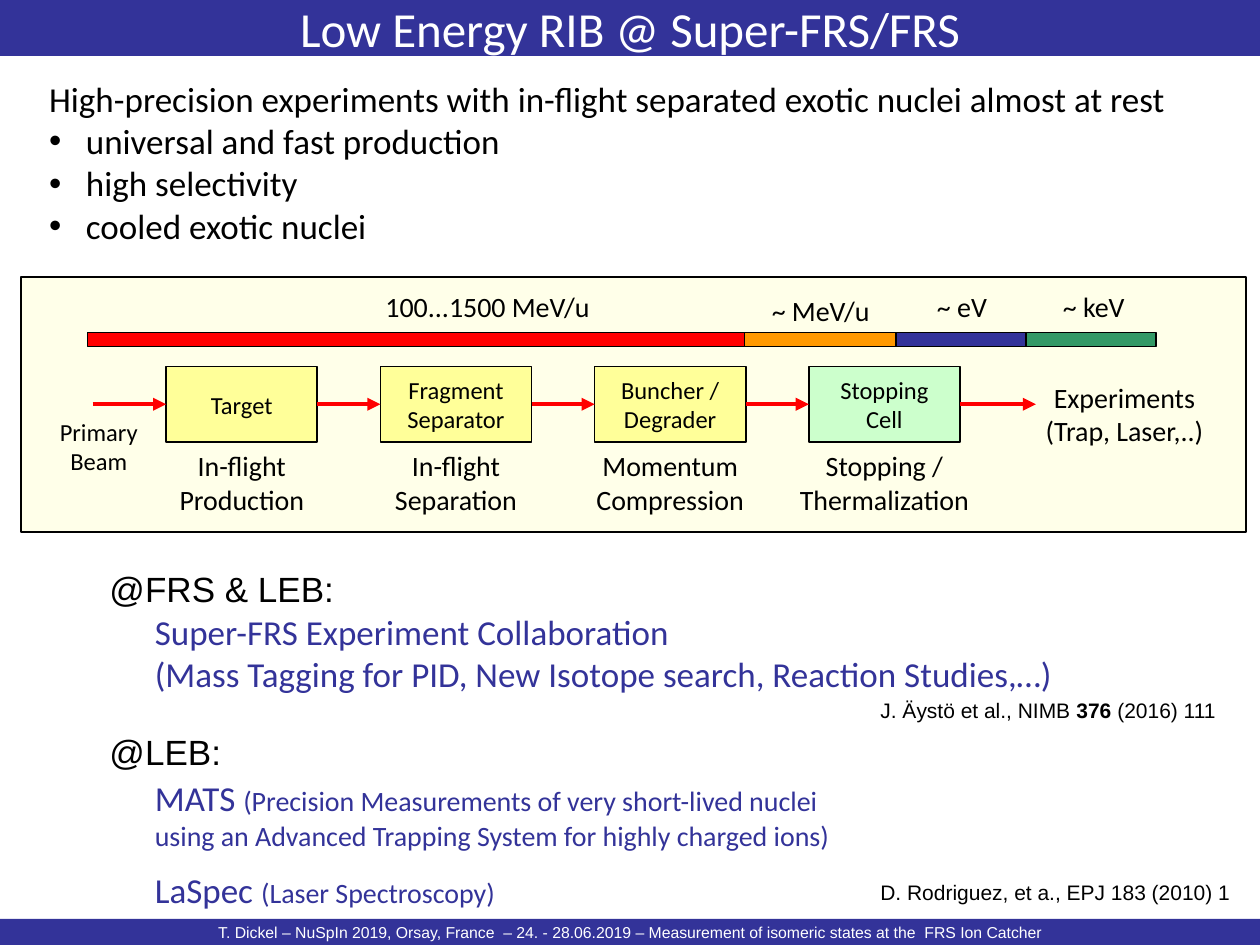
"""Build the slide on low-energy beams at the Super-FRS."""
from dataclasses import dataclass

from lxml import etree
from pptx import Presentation
from pptx import util as u
from pptx.dml.color import RGBColor
from pptx.enum import shapes, text
from pptx.oxml.ns import qn

Pt = u.Pt
BLACK = RGBColor(0, 0, 0)
WHITE = RGBColor(255, 255, 255)
BLUE = RGBColor(0x33, 0x33, 0x99)
CREAM = RGBColor(0xFF, 0xFF, 0xE9)
YELLOW = RGBColor(0xFF, 0xFF, 0x99)
MINT = RGBColor(0xCC, 0xFF, 0xCC)
RED = RGBColor(0xFF, 0, 0)
ORANGE = RGBColor(0xFF, 0x99, 0)
GREEN = RGBColor(0x33, 0x99, 0x66)
BODY, PLAIN = "Calibri", "Arial"
LEFT, CENTER = text.PP_ALIGN.LEFT, text.PP_ALIGN.CENTER
STEP, WIDE, HIGH = 122.4, 86.4, 43.2
FIRST, ROW, MID = 95, 209.4, 231


@dataclass
class Stage:
    name: str
    task: str
    fill: RGBColor = YELLOW


@dataclass
class Band:
    label: str
    width: float
    fill: RGBColor
    mid: float
    top: float = 162


@dataclass
class Note:
    words: str
    left: float
    top: float
    width: float
    size: float


STAGES = [
    Stage("Target", "In-flight\nProduction"),
    Stage("Fragment\nSeparator", "In-flight\nSeparation"),
    Stage("Buncher /\nDegrader", "Momentum\nCompression"),
    Stage("Stopping\nCell", "Stopping /\nThermalization", MINT),
]
BANDS = [
    Band("100...1500 MeV/u", 375.5, RED, 278.6),
    Band("~ MeV/u", 86.4, ORANGE, 469, 164),
    Band("~ eV", 74.5, BLUE, 549.7),
    Band("~ keV", 74.3, GREEN, 625),
]
NOTES = [
    Note("@FRS & LEB:", 55.5, 321, 144, 20),
    Note("@LEB:", 55.5, 414, 80, 20),
    Note("J. Äystö et al., NIMB |376 |(2016) 111", 496, 395.3, 214, 12),
    Note("D. Rodriguez, et a., EPJ 183 (2010) 1", 496, 499, 216, 12),
]


def style(para, size: float, face: str = BODY, color: RGBColor = BLACK,
          align=LEFT) -> None:
    """Format a paragraph and its runs."""
    para.alignment = align
    for run in para.runs:
        run.font.size, run.font.name = Pt(size), face
        run.font.color.rgb = color


def block(slide, left: float, top: float, width: float, high: float,
          fill: RGBColor, edge: bool = True):
    """Draw a filled rectangle."""
    box = slide.shapes.add_shape(shapes.MSO_SHAPE.RECTANGLE, Pt(left), Pt(top),
                                 Pt(width), Pt(high))
    box.shadow.inherit = False
    box.fill.solid()
    box.fill.fore_color.rgb = fill
    if edge:
        box.line.color.rgb, box.line.width = BLACK, Pt(1)
    else:
        box.line.fill.background()
    return box


def write(slide, words: str, left: float, top: float, width: float,
          high: float, size: float, face: str = BODY,
          color: RGBColor = BLACK, align=LEFT, wrap: bool = True):
    """Add a text box and return its frame."""
    frame = slide.shapes.add_textbox(Pt(left), Pt(top), Pt(width),
                                     Pt(high)).text_frame
    frame.word_wrap = wrap
    frame.text = words
    for para in frame.paragraphs:
        style(para, size, face, color, align)
    return frame


def label(slide, words: str, mid: float, top: float, size: float = 16) -> None:
    """Centre a label on a given x."""
    high = 7.2 + size * 1.22 * (words.count("\n") + 1)
    width = 150 if "\n" not in words else STEP
    write(slide, words, mid - width / 2, top, width, high, size, align=CENTER)


def arrow(slide, start: float, end: float, tail=None, head=None) -> None:
    """Draw a red arrow, joined to the boxes it touches."""
    line = slide.shapes.add_connector(shapes.MSO_CONNECTOR.STRAIGHT, Pt(start),
                                      Pt(MID), Pt(end), Pt(MID))
    if tail is not None:
        line.begin_connect(tail, 3)
    if head is not None:
        line.end_connect(head, 1)
    line.line.color.rgb, line.line.width = RED, Pt(2.5)
    etree.SubElement(line.line._get_or_add_ln(), qn("a:tailEnd"),
                     type="triangle")
    etree.SubElement(line._element.spPr, qn("a:effectLst"))


def bullet(para) -> None:
    """Give a paragraph a hanging bullet."""
    props = para._p.get_or_add_pPr()
    props.set("marL", str(Pt(21)))
    props.set("indent", str(-Pt(21)))
    etree.SubElement(props, qn("a:buFont"), typeface=PLAIN)
    etree.SubElement(props, qn("a:buChar"), char="•")


def head(slide) -> None:
    """Fill the title band."""
    title = slide.shapes.title
    title.left, title.top, title.width, title.height = 0, 0, Pt(720), Pt(32)
    title.fill.solid()
    title.fill.fore_color.rgb = BLUE
    frame = title.text_frame
    frame.text = "Low Energy RIB @ Super-FRS/FRS"
    frame.auto_size = text.MSO_AUTO_SIZE.NONE
    frame.vertical_anchor = text.MSO_ANCHOR.MIDDLE
    style(frame.paragraphs[0], 28, color=WHITE, align=CENTER)


def foot(slide) -> None:
    """Draw the footer band."""
    frame = block(slide, 0, 525, 720, 15, BLUE, False).text_frame
    frame.margin_top = frame.margin_bottom = 0
    frame.text = ("T. Dickel – NuSpIn 2019, Orsay, France  – 24. - 28.06.2019 "
                  "– Measurement of isomeric states at the  FRS Ion Catcher")
    style(frame.paragraphs[0], 9, PLAIN, WHITE, CENTER)


def scheme(slide) -> None:
    """Draw the energy scale and the chain of stages."""
    block(slide, 12, 158.4, 700, 145.5, CREAM)
    left = 50
    for band in BANDS:
        block(slide, left, 190, band.width, 8, band.fill)
        label(slide, band.label, band.mid, band.top)
        left += band.width
    last, end = None, 53
    for i, stage in enumerate(STAGES):
        left = FIRST + i * STEP
        box = block(slide, left, ROW, WIDE, HIGH, stage.fill)
        box.text_frame.text = stage.name
        box.text_frame.vertical_anchor = text.MSO_ANCHOR.MIDDLE
        for para in box.text_frame.paragraphs:
            style(para, 14, align=CENTER)
        label(slide, stage.task, left + WIDE / 2, 253)
        arrow(slide, end, left, last, box)
        last, end = box, left + WIDE
    arrow(slide, end, 592, last)
    label(slide, "Primary\nBeam", 56.5, 234.7, 14)
    label(slide, "Experiments\n(Trap, Laser,..)", 642.6, 213.8)


def main() -> None:
    """Assemble and save the slide."""
    deck = Presentation()
    deck.slide_width, deck.slide_height = Pt(720), Pt(540)
    slide = deck.slides.add_slide(deck.slide_layouts[5])
    head(slide)
    foot(slide)
    goals = write(slide, "High-precision experiments with in-flight separated "
                  "exotic nuclei almost at rest\nuniversal and fast production"
                  "\nhigh selectivity\ncooled exotic nuclei",
                  21, 41, 680, 104.4, 20)
    for para in goals.paragraphs[1:]:
        bullet(para)
    scheme(slide)
    plans = write(slide, "Super-FRS Experiment Collaboration\n(Mass Tagging for "
                  "PID, New Isotope search, Reaction Studies,…)\nMATS \nusing an "
                  "Advanced Trapping System for highly charged ions)\nLaSpec ",
                  81.4, 345.6, 532, 180, 20, color=BLUE, wrap=False).paragraphs
    plans[2].add_run().text = "(Precision Measurements of very short-lived nuclei"
    plans[4].add_run().text = "(Laser Spectroscopy)"
    for para, gap in ((plans[2], 46.4), (plans[4], 9.8)):
        para.space_before = Pt(gap)
        style(para, 16, color=BLUE)
        para.runs[0].font.size = Pt(20)
    style(plans[3], 16, color=BLUE)
    for note in NOTES:
        first, *rest = note.words.split("|")
        para = write(slide, first, note.left, note.top, note.width,
                     7.2 + note.size * 1.2, note.size, PLAIN,
                     wrap=False).paragraphs[0]
        for i, part in enumerate(rest):
            run = para.add_run()
            run.text, run.font.bold = part, i == 0
        style(para, note.size, PLAIN)
    deck.save("out.pptx")


if __name__ == "__main__":
    main()
